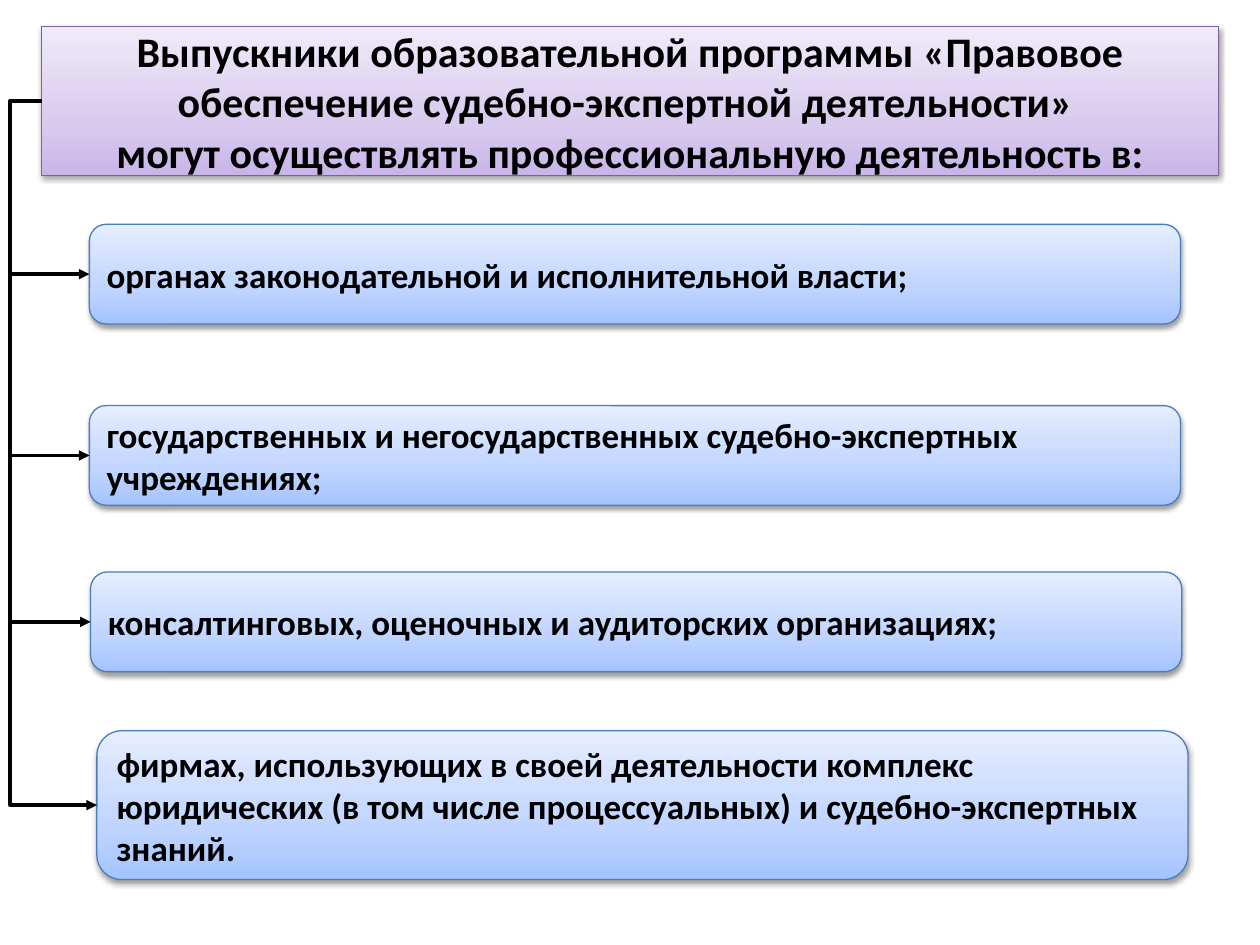
from lxml.etree import SubElement
from pptx import Presentation
from pptx.dml.color import RGBColor
from pptx.enum.shapes import MSO_CONNECTOR as Link, MSO_SHAPE as Shape
from pptx.enum.text import MSO_ANCHOR as Anchor, MSO_AUTO_SIZE as AutoSize, PP_ALIGN as Align
from pptx.oxml.ns import qn
from pptx.util import Pt

HEADING = (
    "Выпускники образовательной программы «Правовое обеспечение "
    "судебно-экспертной деятельности» \n"
    "могут осуществлять профессиональную деятельность в:"
)
# left, top, height, text
WORKPLACES = [
    (51.1, 128.2, 56.9, "органах законодательной и исполнительной власти;"),
    (51.1, 231.8, 56.9, "государственных и негосударственных судебно-экспертных учреждениях;"),
    (51.8, 326.9, 56.9, "консалтинговых, оценочных и аудиторских организациях;"),
    (55.4, 417.6, 85, "фирмах, использующих в своей деятельности комплекс юридических "
                      "(в том числе процессуальных) и судебно-экспертных знаний."),
]
WORKPLACE_WIDTH = 623.5
TRUNK_X = 5.8
LEFT_SIDE = 1  # connection site of a rounded rectangle
STOPS = (0, 35, 100)
PURPLE = ("C9B5E8", "D8CBEE", "F0EAF9")
BLUE = ("A4C4FF", "BFD4FF", "E6EEFF")


def color(hex_value):
    return RGBColor.from_string(hex_value)


def element(parent, tag, **attributes):
    return SubElement(parent, qn(tag), {k: str(v) for k, v in attributes.items()})


def place(box, left, top, width, height):
    box.left, box.top, box.width, box.height = Pt(left), Pt(top), Pt(width), Pt(height)


def style_box(box, shades, outline):
    # Upward gradient
    box.fill.gradient()
    box.fill.gradient_angle = 90
    properties = box._element.spPr
    stop_list = properties.find(qn("a:gradFill")).find(qn("a:gsLst"))
    for stop in list(stop_list):
        stop_list.remove(stop)
    for position, shade in zip(STOPS, shades):
        stop = element(stop_list, "a:gs", pos=position * 1000)
        element(stop, "a:srgbClr", val=shade)

    box.line.color.rgb = color(outline)
    box.line.width = Pt(0.75)

    # Soft shadow below
    box.shadow.inherit = False
    shadow = element(properties.find(qn("a:effectLst")), "a:outerShdw", blurRad=Pt(3.1),
                     dist=Pt(1.6), dir=5400000, rotWithShape=0)
    black = element(shadow, "a:srgbClr", val="000000")
    element(black, "a:alpha", val=38000)


def write(box, text, size, align):
    frame = box.text_frame
    frame.text = text
    frame.word_wrap = True
    frame.auto_size = AutoSize.NONE
    frame.vertical_anchor = Anchor.MIDDLE
    for paragraph in frame.paragraphs:
        paragraph.alignment = align
        for run in paragraph.runs:
            run.font.name = "Calibri"
            run.font.size = Pt(size)
            run.font.bold = True
            run.font.color.rgb = color("000000")


def add_heading(slide):
    heading = slide.shapes.title
    place(heading, 23.8, 15.1, 672.5, 85)
    geometry = element(heading._element.spPr, "a:prstGeom", prst="roundRect")
    element(geometry, "a:avLst")
    style_box(heading, PURPLE, "7D60A0")
    write(heading, HEADING, 24, Align.CENTER)
    return heading


def add_workplace(slide, left, top, height, text):
    box = slide.shapes.add_shape(Shape.ROUNDED_RECTANGLE, Pt(left), Pt(top),
                                 Pt(WORKPLACE_WIDTH), Pt(height))
    style_box(box, BLUE, "4B7EBC")
    write(box, text, 20, Align.LEFT)
    return box


def add_arrow(slide, kind, target):
    middle = target.top + target.height // 2
    arrow = slide.shapes.add_connector(kind, Pt(TRUNK_X), middle, target.left, middle)
    arrow.end_connect(target, LEFT_SIDE)
    arrow.line.color.rgb = color("000000")
    arrow.line.width = Pt(2)
    element(arrow.line._get_or_add_ln(), "a:tailEnd", type="triangle")
    element(arrow._element.spPr, "a:effectLst")
    return arrow


def add_trunk(slide, heading, target):
    trunk = add_arrow(slide, Link.ELBOW, target)
    trunk.begin_connect(heading, LEFT_SIDE)
    # Bend to the left of both boxes
    bend = (Pt(TRUNK_X) - heading.left) / (target.left - heading.left)
    guides = trunk._element.spPr.find(qn("a:prstGeom")).find(qn("a:avLst"))
    element(guides, "a:gd", name="adj1", fmla=f"val {round(bend * 100000)}")


def main():
    deck = Presentation()
    deck.slide_width, deck.slide_height = Pt(720), Pt(540)
    slide = deck.slides.add_slide(deck.slide_layouts[5])

    heading = add_heading(slide)
    *branches, last = [add_workplace(slide, *workplace) for workplace in WORKPLACES]
    add_trunk(slide, heading, last)
    for branch in branches:
        add_arrow(slide, Link.STRAIGHT, branch)

    deck.save("out.pptx")


if __name__ == "__main__":
    main()
